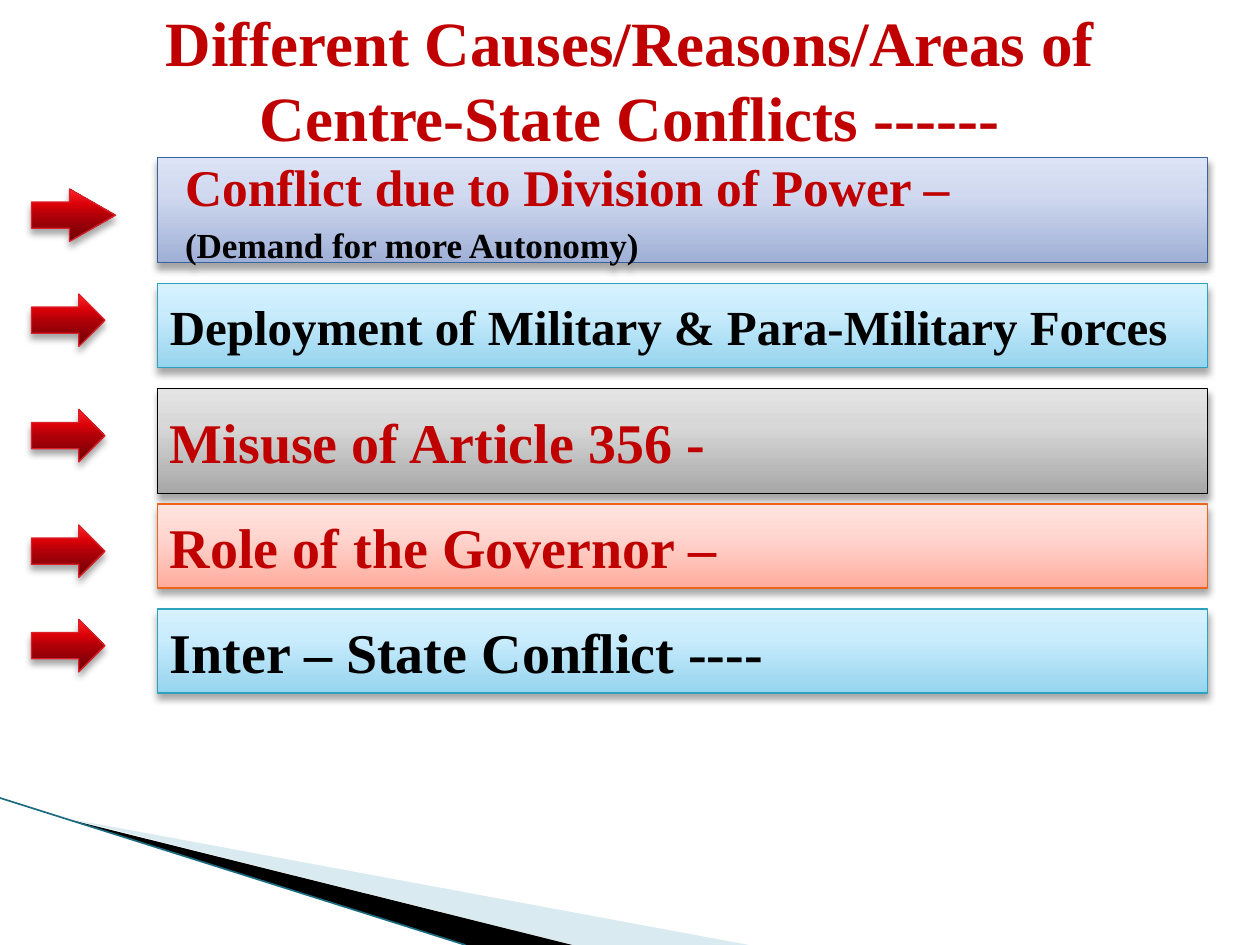
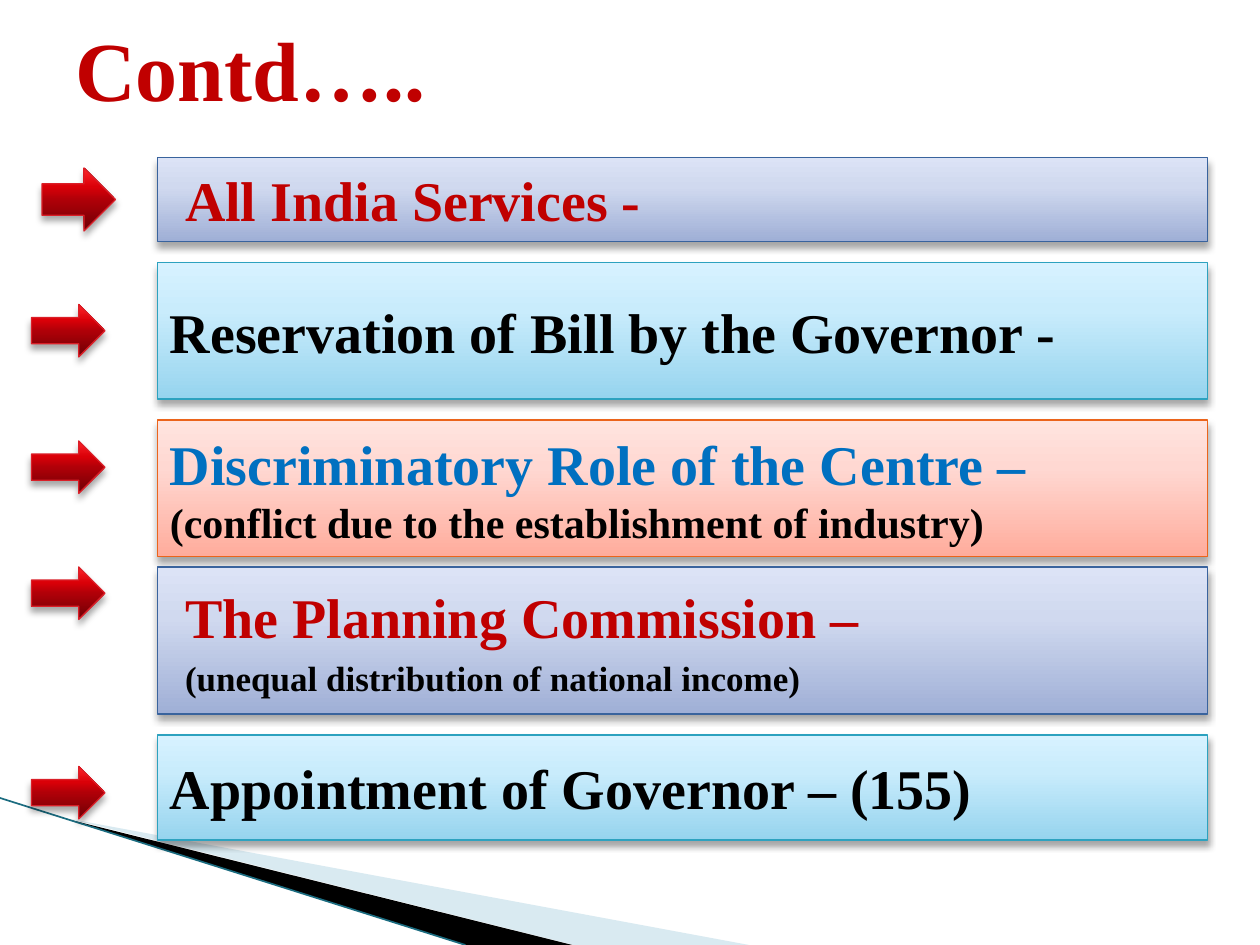
from lxml import etree
from pptx import Presentation
from pptx import util as u
from pptx.dml.color import RGBColor
from pptx.enum import shapes, text
from pptx.oxml import ns

Pt = u.Pt
FONT = "Times New Roman"
INK = {"red": "C00000", "black": "000000", "blue": "0070C0",
       "pale": "A0CBDC", "teal": "1B6C80"}
# Each style: line colour, then gradient stops from bottom to top
STYLES = {
    "indigo": ("39639D", {0: "9FAFD6", 65: "D0D9EF", 100: "DCE3F6"}),
    "sky": ("2DA2BF", {0: "96D4EE", 65: "C9ECFC", 100: "D7F2FF"}),
    "grey": ("000000", {0: "A7A7A7", 65: "D8D8D8", 100: "E4E4E4"}),
    "coral": ("EB641B", {0: "FFAC9C", 65: "FFD8D2", 100: "FFE4DF"}),
    "arrow": ("DA1F28", {0: "6D0005", 50: "B00008",
                         70: "DA0008", 100: "FF2429"}),
}
BOX_X, BOX_W = 90, 600


def rgb(name):
    return RGBColor.from_string(INK[name])


def sub(node, tag, **attrs):
    return etree.SubElement(node, ns.qn(tag),
                            {key: str(val) for key, val in attrs.items()})


def tint(node, color, alpha):
    """Add a colour with an opacity in percent."""
    sub(sub(node, "a:srgbClr", val=color), "a:alpha", val=alpha * 1000)


def dress(shape, style):
    """Give a shape its gradient, outline and soft shadow below."""
    edge, stops = STYLES[style]
    shape.fill.gradient()
    shape.fill.gradient_angle = 90
    grad = shape._element.spPr.find(ns.qn("a:gradFill"))
    grad.find(ns.qn("a:lin")).set("ang", "16200000")
    stop_list = grad.find(ns.qn("a:gsLst"))
    for old in list(stop_list):
        stop_list.remove(old)
    for pos, color in stops.items():
        sub(sub(stop_list, "a:gs", pos=pos * 1000), "a:srgbClr", val=color)
    shape.line.color.rgb = RGBColor.from_string(edge)
    shape.line.width = Pt(0.75)
    shape.shadow.inherit = False
    effects = shape._element.spPr.find(ns.qn("a:effectLst"))
    shadow = sub(effects, "a:outerShdw", blurRad=Pt(4), dist=Pt(3),
                 dir=5400000, rotWithShape=0)
    tint(shadow, "000000", 35)


def write(shape, lines, align=text.PP_ALIGN.LEFT, inset=False):
    """Fill a shape with (words, size, colour) lines."""
    frame = shape.text_frame
    frame.word_wrap = True
    frame.vertical_anchor = text.MSO_ANCHOR.MIDDLE
    for i, (words, size, color) in enumerate(lines):
        para = frame.add_paragraph() if i else frame.paragraphs[0]
        para.alignment = align
        if inset:
            props = para._p.get_or_add_pPr()
            props.set("marL", str(Pt(28.8)))
            props.set("indent", str(Pt(-20.16)))
            if i:
                para.space_before = Pt(4)
        run = para.add_run()
        run.text = words
        run.font.name = FONT
        run.font.size = Pt(size)
        run.font.bold = True
        run.font.color.rgb = rgb(color)


def add_title(slide, words, size, height, align):
    box = slide.shapes.add_textbox(Pt(36), 0, Pt(648), Pt(height))
    write(box, [(words, size, "red")], align)


def add_box(slide, top, height, style, lines):
    box = slide.shapes.add_shape(shapes.MSO_SHAPE.RECTANGLE, Pt(BOX_X),
                                 Pt(top), Pt(BOX_W), Pt(height))
    dress(box, style)
    write(box, lines, inset=style == "indigo")


def add_arrow(slide, top, left=18, width=42, height=30, head=0.5):
    arrow = slide.shapes.add_shape(shapes.MSO_SHAPE.RIGHT_ARROW, Pt(left),
                                   Pt(top), Pt(width), Pt(height))
    arrow.adjustments[1] = head
    dress(arrow, "arrow")


def add_wedge(slide, points, color, alpha=100):
    path = slide.shapes.build_freeform(*points[0], scale=Pt(1))
    path.add_line_segments(points[1:])
    wedge = path.convert_to_shape()
    wedge.fill.solid()
    wedge.fill.fore_color.rgb = rgb(color)
    wedge.line.fill.background()
    wedge.shadow.inherit = False
    if alpha < 100:
        fill = wedge._element.spPr.find(ns.qn("a:solidFill"))
        fill.remove(fill[0])
        tint(fill, INK[color], alpha)


def add_corner(slide):
    add_wedge(slide, [(39.6, 468.5), (428, 540), (328, 540), (39.6, 468)],
              "pale", 40)
    add_wedge(slide, [(38, 467.5), (327, 540), (266, 540), (38, 468)],
              "black")
    edge = slide.shapes.add_connector(shapes.MSO_CONNECTOR.STRAIGHT,
                                      0, Pt(456), Pt(266), Pt(540))
    edge.line.color.rgb = rgb("teal")
    edge.line.width = Pt(0.95)
    sub(edge._element.spPr, "a:effectLst")


def add_page(deck, title, boxes, arrows, lead):
    """Build a slide; lead describes its special first arrow."""
    slide = deck.slides.add_slide(deck.slide_layouts[6])
    add_corner(slide)
    add_title(slide, *title)
    for box in boxes:
        add_box(slide, *box)
    add_arrow(slide, **lead)
    for top in arrows:
        add_arrow(slide, top)


def main():
    deck = Presentation()
    deck.slide_width, deck.slide_height = Pt(720), Pt(540)
    add_page(
        deck,
        ("Different Causes/Reasons/Areas of Centre-State Conflicts ------",
         36, 90, text.PP_ALIGN.CENTER),
        [(90, 60, "indigo",
          [("Conflict due to Division of Power –", 29.4, "red"),
           ("(Demand for more Autonomy)", 20.1, "black")]),
         (162, 48, "sky", [("Deployment of Military & Para-Military Forces",
                            28, "black")]),
         (222, 60, "grey", [("Misuse of Article 356 -", 32, "red")]),
         (288, 48, "coral", [("Role of the Governor –", 32, "red")]),
         (348, 48, "sky", [("Inter – State Conflict ----", 32, "black")])],
        [168, 234, 300, 354],
        {"top": 108, "width": 48, "head": 0.875})
    add_page(
        deck,
        ("Contd…..", 48, 78, text.PP_ALIGN.LEFT),
        [(90, 48, "indigo", [("All India Services -", 32, "red")]),
         (150, 78, "sky", [("Reservation of Bill by the Governor -",
                            32, "black")]),
         (240, 78, "coral",
          [("Discriminatory Role of the Centre –", 32, "blue"),
           ("(conflict due to the establishment of industry)",
            24, "black")]),
         (324, 84, "indigo",
          [("The Planning Commission –", 32, "red"),
           ("(unequal distribution of national income)", 20, "black")]),
         (420, 60, "sky", [("Appointment of Governor – (155)",
                            32, "black")])],
        [174, 252, 324, 438],
        {"top": 96, "left": 24, "height": 36})
    deck.save("out.pptx")


if __name__ == "__main__":
    main()
